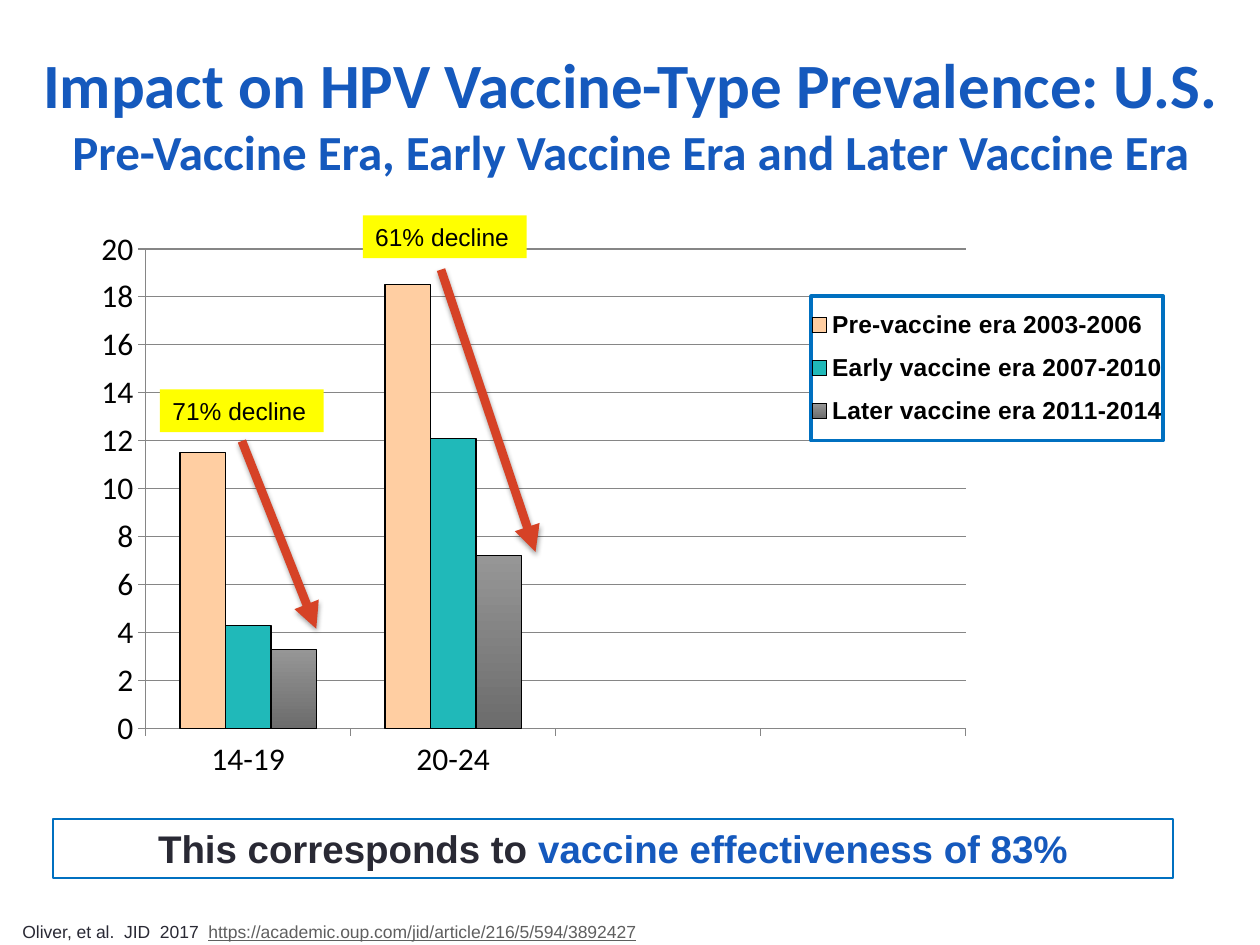
"""Build the slide on HPV vaccine-type prevalence in three vaccine eras."""
from typing import NamedTuple

from lxml.etree import SubElement
from pptx import Presentation
from pptx.chart.data import CategoryChartData
from pptx.dml.color import RGBColor
from pptx.enum.chart import XL_CHART_TYPE as ChartType, XL_LEGEND_POSITION as LegendPosition
from pptx.enum.chart import XL_TICK_MARK as TickMark
from pptx.enum.shapes import MSO_CONNECTOR as Connector, MSO_SHAPE as Shape
from pptx.enum.text import MSO_ANCHOR as Anchor, MSO_AUTO_SIZE as AutoSize, PP_ALIGN as Align
from pptx.oxml import parse_xml
from pptx.oxml.ns import nsdecls, qn
from pptx.util import Inches, Pt

BLUE = RGBColor(0x15, 0x59, 0xBD)
FRAME = RGBColor(0x00, 0x70, 0xC0)
INK = RGBColor(0x29, 0x29, 0x34)
LINK = RGBColor(0x5F, 0x5F, 0x5F)
BLACK = RGBColor(0x00, 0x00, 0x00)
WHITE = RGBColor(0xFF, 0xFF, 0xFF)
YELLOW = RGBColor(0xFF, 0xFF, 0x00)
RED = RGBColor(0xD6, 0x42, 0x26)
PEACH = RGBColor(0xFF, 0xCE, 0xA2)
TEAL = RGBColor(0x20, 0xB9, 0xB9)
GREY = RGBColor(0x96, 0x96, 0x96)
DARK_GREY = RGBColor(0x6C, 0x6C, 0x6C)
GRID = RGBColor(0x86, 0x86, 0x86)


class Era(NamedTuple):
    name: str
    values: tuple
    color: RGBColor


class Decline(NamedTuple):
    text: str
    left: float
    top: float
    start: tuple
    end: tuple


AGES = ("14-19", "20-24", "", "")
ERAS = (
    Era("Pre-vaccine era 2003-2006", (11.5, 18.5, None, None), PEACH),
    Era("Early vaccine era 2007-2010", (4.3, 12.1, None, None), TEAL),
    Era("Later vaccine era 2011-2014", (3.3, 7.2, None, None), GREY),
)
DECLINES = (
    Decline("71% decline", 1.27, 3.09, (1.92, 3.5), (2.51, 4.99)),
    Decline("61% decline", 2.88, 1.71, (3.5, 2.14), (4.25, 4.38)),
)


def add_span(para, text: str, *, size: float, color: RGBColor, name: str = "Arial",
             bold: bool = False, underline: bool = False) -> None:
    span = para.add_run()
    span.text = text
    font = span.font
    font.size, font.name, font.bold = Pt(size), name, bold
    font.color.rgb = color
    if underline:
        font.underline = True


def add_box(page, left: float, top: float, width: float, height: float, *,
            fill: RGBColor, line: RGBColor | None = None, align: Align = Align.LEFT):
    box = page.shapes.add_shape(Shape.RECTANGLE, *map(Inches, (left, top, width, height)))
    box.shadow.inherit = False
    box.fill.solid()
    box.fill.fore_color.rgb = fill
    if line is None:
        box.line.fill.background()
    else:
        box.line.color.rgb = line
        box.line.width = Pt(1.5)
    frame = box.text_frame
    frame.word_wrap = True
    frame.vertical_anchor = Anchor.TOP
    para = frame.paragraphs[0]
    para.alignment = align
    return para


def add_arrow(page, start: tuple, end: tuple) -> None:
    arrow = page.shapes.add_connector(Connector.STRAIGHT, *map(Inches, start + end))
    arrow.line.color.rgb = RED
    arrow.line.width = Pt(5)
    SubElement(arrow.line._get_or_add_ln(), qn("a:tailEnd"), type="triangle")
    arrow._element.spPr.append(parse_xml(
        f'<a:effectLst {nsdecls("a")}><a:outerShdw blurRad="{Pt(3.1)}" dist="{Pt(1.6)}" '
        'dir="5400000" rotWithShape="0"><a:srgbClr val="000000"><a:alpha val="38000"/>'
        '</a:srgbClr></a:outerShdw></a:effectLst>'))


def make_layout(x: float, y: float, w: float, h: float, *, inner: bool = False):
    target = '<c:layoutTarget val="inner"/>' if inner else ""
    modes = "".join(f'<c:{side}Mode val="edge"/>' for side in "xy")
    sizes = "".join(f'<c:{key} val="{value}"/>' for key, value in zip("xywh", (x, y, w, h)))
    return parse_xml(f'<c:layout {nsdecls("c")}><c:manualLayout>{target}{modes}{sizes}'
                     '</c:manualLayout></c:layout>')


def add_legend(chart) -> None:
    chart.has_legend = True
    legend = chart.legend
    legend.position = LegendPosition.RIGHT
    legend.include_in_layout = False
    font = legend.font
    font.size, font.name, font.bold = Pt(14), "Arial", True
    font.color.rgb = BLACK
    element = legend._element
    for old in element.findall(qn("c:layout")):
        element.remove(old)
    element.find(qn("c:legendPos")).addnext(make_layout(0.66, 0.14, 0.31, 0.25))
    element.find(qn("c:overlay")).addnext(parse_xml(
        f'<c:spPr {nsdecls("c", "a")}><a:solidFill><a:srgbClr val="{WHITE}"/></a:solidFill>'
        f'<a:ln w="{Pt(2.25)}"><a:solidFill><a:srgbClr val="{FRAME}"/></a:solidFill></a:ln>'
        '</c:spPr>'))


def add_prevalence_chart(page) -> None:
    data = CategoryChartData()
    data.categories = AGES
    for era in ERAS:
        data.add_series(era.name, era.values)
    chart = page.shapes.add_chart(ChartType.COLUMN_CLUSTERED, Inches(0.5), Inches(1.71),
                                  Inches(9), Inches(4.58), data).chart
    chart.has_title = False
    chart.font.size, chart.font.name = Pt(18), "Calibri"
    chart.font.color.rgb = BLACK
    plot = chart.plots[0]
    plot.gap_width, plot.vary_by_categories = 150, False
    for series, era in zip(plot.series, ERAS):
        fill = series.format.fill
        if era.color == GREY:
            fill.gradient()
            fill.gradient_angle = 270
            for stop, color in zip(fill.gradient_stops, (GREY, DARK_GREY)):
                stop.color.rgb = color
        else:
            fill.solid()
            fill.fore_color.rgb = era.color
        series.format.line.color.rgb = BLACK
        series.format.line.width = Pt(0.75)
    values = chart.value_axis
    values.minimum_scale, values.maximum_scale, values.major_unit = 0, 20, 2
    values.has_major_gridlines = True
    for axis in (chart.category_axis, values):
        axis.major_tick_mark = TickMark.OUTSIDE
    for part in (chart.category_axis, values, values.major_gridlines):
        part.format.line.color.rgb = GRID
        part.format.line.width = Pt(0.75)
    area = chart._chartSpace.chart.plotArea
    for old in area.findall(qn("c:layout")):
        area.remove(old)
    area.insert(0, make_layout(0.073, 0.058, 0.723, 0.831, inner=True))
    add_legend(chart)


def add_title(page) -> None:
    title = page.shapes.title
    title.left, title.top, title.width, title.height = map(Inches, (0.17, 0.63, 9.67, 0.53))
    frame = title.text_frame
    frame.auto_size = AutoSize.NONE
    frame.vertical_anchor = Anchor.MIDDLE
    lines = (("Impact on HPV Vaccine-Type Prevalence: U.S.", 36),
             ("Pre-Vaccine Era, Early Vaccine Era and Later Vaccine Era", 28))
    for index, (text, size) in enumerate(lines):
        para = frame.add_paragraph() if index else frame.paragraphs[0]
        para.alignment = Align.CENTER
        add_span(para, text, size=size, color=BLUE, name="Calibri", bold=True)


def add_citation(page) -> None:
    box = page.shapes.add_textbox(*map(Inches, (0.08, 7.26, 5.83, 0.24)))
    box.text_frame.word_wrap = True
    para = box.text_frame.paragraphs[0]
    add_span(para, "Oliver, et al.  JID  2017  ", size=10, color=INK)
    add_span(para, "https://academic.oup.com/jid/article/216/5/594/3892427",
             size=10, color=LINK, underline=True)


def main() -> None:
    deck = Presentation()
    deck.slide_width, deck.slide_height = Inches(10), Inches(7.5)
    page = deck.slides.add_slide(deck.slide_layouts[5])
    add_title(page)
    add_prevalence_chart(page)
    for decline in DECLINES:
        add_arrow(page, decline.start, decline.end)
        para = add_box(page, decline.left, decline.top, 1.3, 0.34, fill=YELLOW)
        add_span(para, decline.text, size=14, color=BLACK)
    add_citation(page)
    para = add_box(page, 0.42, 6.5, 8.89, 0.47, fill=WHITE, line=FRAME, align=Align.CENTER)
    add_span(para, "This corresponds to ", size=22, color=INK, bold=True)
    add_span(para, "vaccine effectiveness of 83%", size=22, color=BLUE, bold=True)
    deck.save("out.pptx")


if __name__ == "__main__":
    main()
